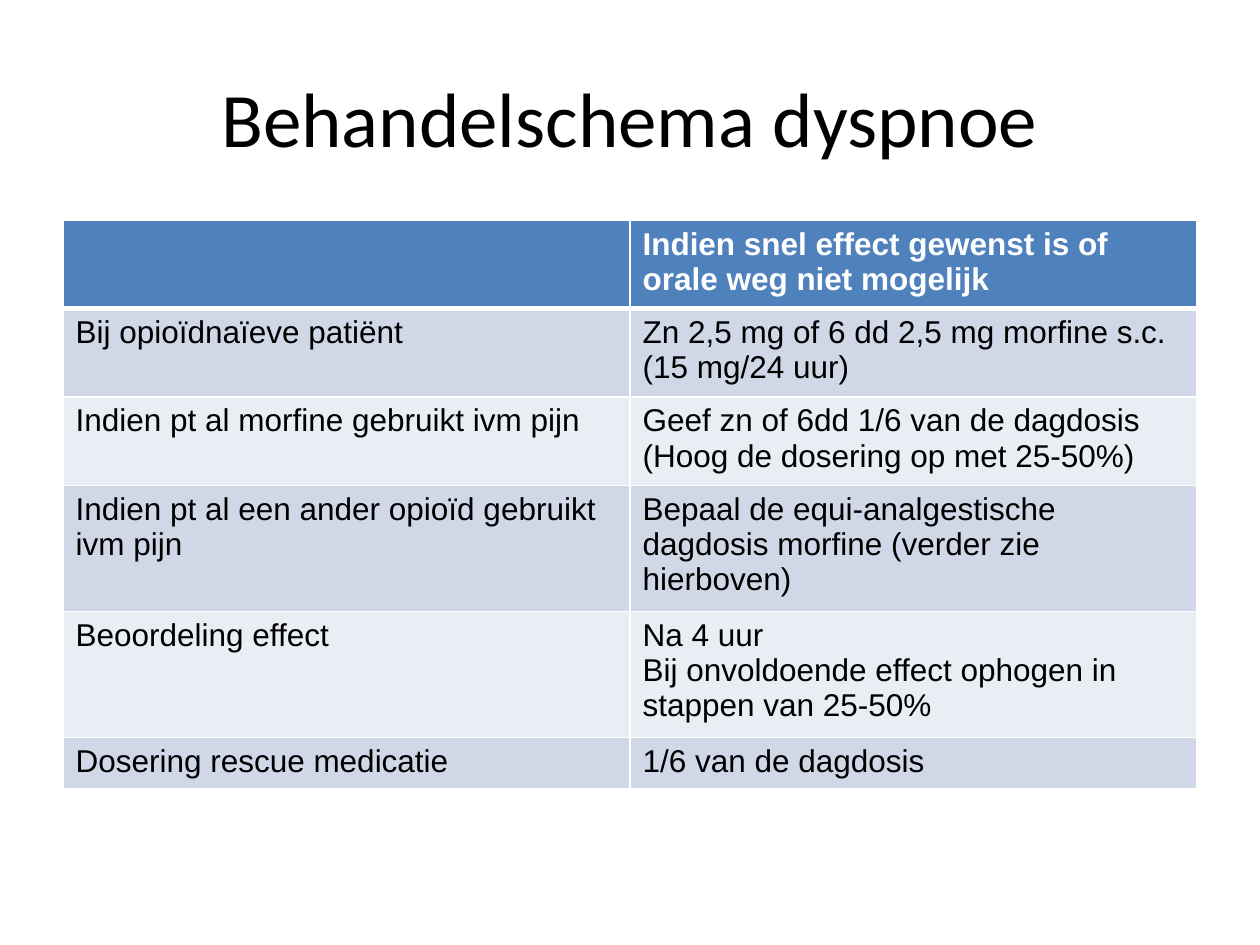
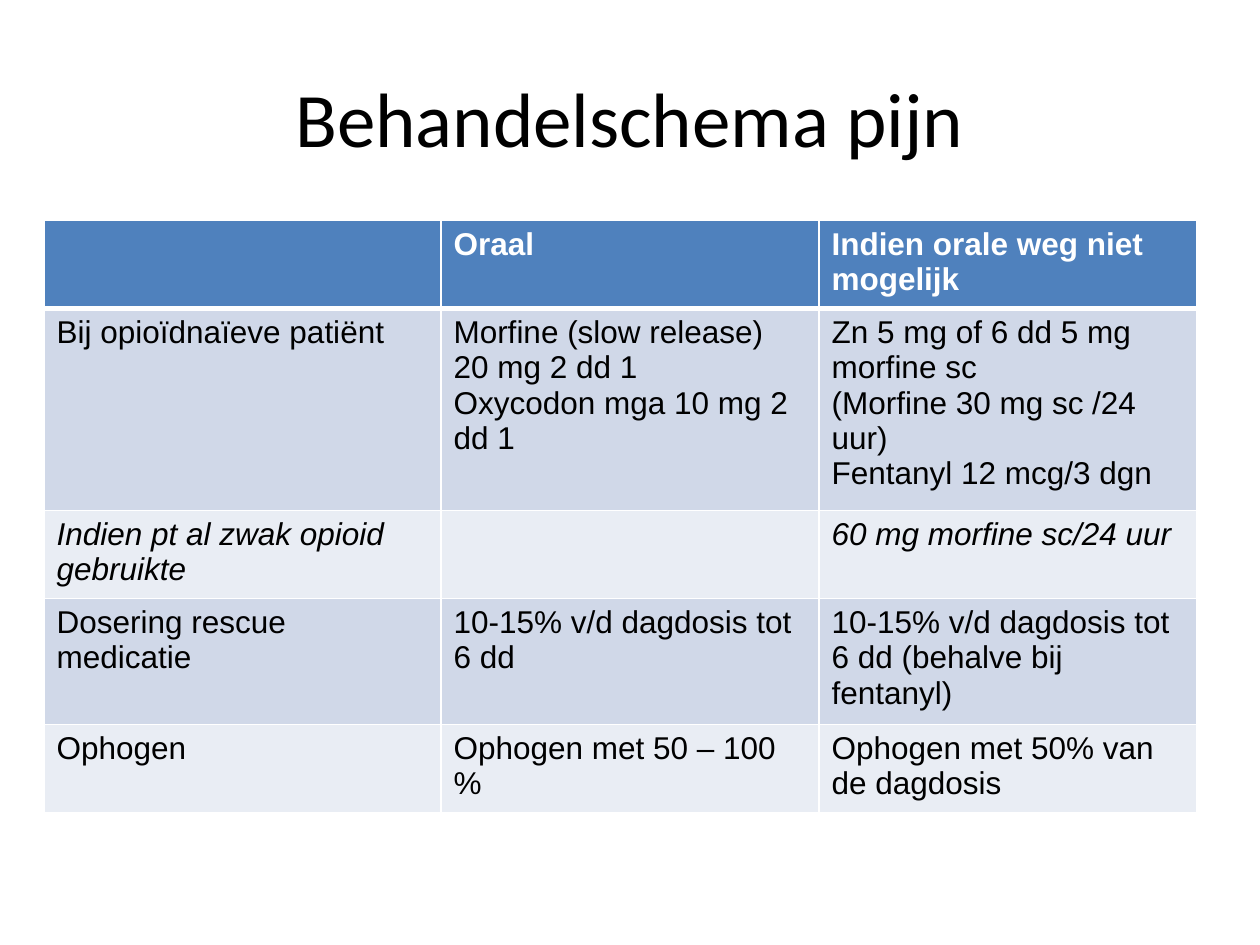
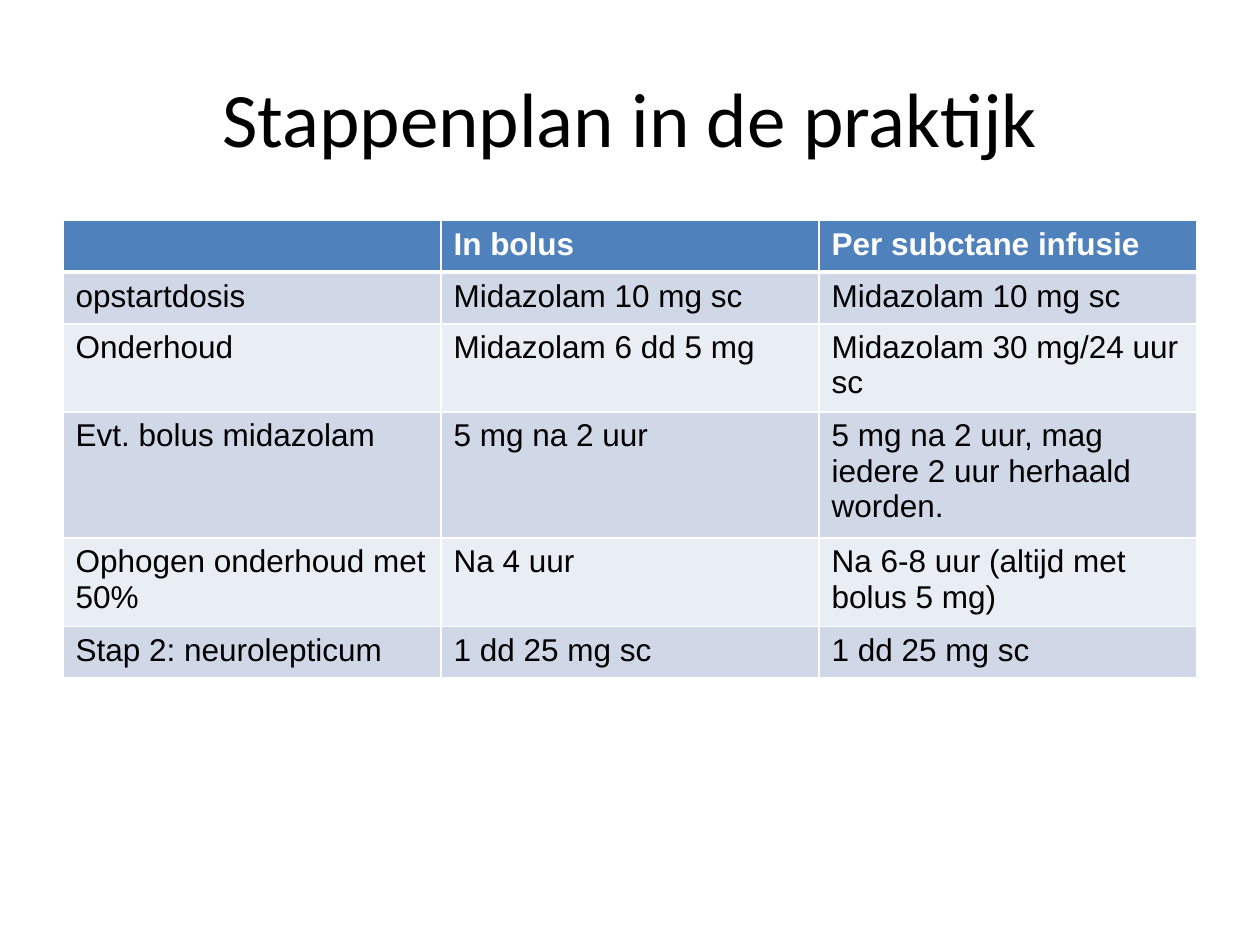
from lxml import etree
from pptx import Presentation
from pptx import util as u
from pptx.dml.color import RGBColor
from pptx.enum import text
from pptx.oxml import ns

BLACK = RGBColor(0x00, 0x00, 0x00)
WHITE = RGBColor(0xFF, 0xFF, 0xFF)
HEADER_BLUE = RGBColor(0x4F, 0x81, 0xBD)
BANDS = (RGBColor(0xD0, 0xD8, 0xE8), RGBColor(0xE9, 0xED, 0xF4))

# The 10 x 7.5 inch slide is a grid of 200 columns by 150 rows.
STEP = u.Inches(0.05)
COLUMNS, ROWS = 200, 150
MARGIN = 10
TITLE_TOP, TITLE_HEIGHT = 6, 25
TABLE_TOP = 35
ONE_LINE, TWO_LINES, THREE_LINES = 8.2, 14, 20


def grid(count):
    return u.Emu(round(count * STEP))


class Deck:
    title_font, title_size = "Calibri", 44
    table_font, table_size = "Arial", 18

    def __init__(self):
        self.presentation = Presentation()
        self.presentation.slide_width = grid(COLUMNS)
        self.presentation.slide_height = grid(ROWS)
        self.slide = None

    def start_slide(self, heading):
        self.slide = self.presentation.slides.add_slide(self.presentation.slide_layouts[6])
        self.title(heading)

    def format_runs(self, paragraph, font, size, color, bold=False, italic=False):
        for run in paragraph.runs:
            run.font.name = font
            run.font.size = u.Pt(size)
            run.font.color.rgb = color
            run.font.bold = bold
            run.font.italic = italic

    def title(self, heading):
        box = self.slide.shapes.add_textbox(
            grid(MARGIN), grid(TITLE_TOP), grid(COLUMNS - 2 * MARGIN), grid(TITLE_HEIGHT))
        frame = box.text_frame
        frame.word_wrap = True
        frame.vertical_anchor = text.MSO_ANCHOR.MIDDLE
        frame.text = heading
        frame.paragraphs[0].alignment = text.PP_ALIGN.CENTER
        self.format_runs(frame.paragraphs[0], self.title_font, self.title_size, BLACK)

    def table(self, left, widths, heights, entries, italic_rows=()):
        """Draw a banded table; a line break in an entry starts a new paragraph."""
        table = self.slide.shapes.add_table(
            len(heights), len(widths), grid(left), grid(TABLE_TOP),
            grid(sum(widths)), grid(sum(heights))).table
        for column, width in zip(table.columns, widths):
            column.width = grid(width)
        for row_index, (row, height) in enumerate(zip(table.rows, heights)):
            row.height = grid(height)
            for cell, entry in zip(row.cells, entries[row_index]):
                self.cell(cell, entry, row_index, row_index in italic_rows)

    def cell(self, cell, entry, row_index, italic):
        is_header = row_index == 0
        self.borders(cell, top=3 if row_index == 1 else 1, bottom=3 if is_header else 1)
        cell.fill.solid()
        cell.fill.fore_color.rgb = HEADER_BLUE if is_header else BANDS[(row_index - 1) % 2]
        cell.text_frame.text = entry
        for paragraph in cell.text_frame.paragraphs:
            self.format_runs(paragraph, self.table_font, self.table_size,
                             WHITE if is_header else BLACK, is_header, italic)

    def borders(self, cell, top, bottom):
        """Add white cell edges; call before the fill, which must follow them in the XML."""
        properties = cell._tc.get_or_add_tcPr()
        for edge, points in (("L", 1), ("R", 1), ("T", top), ("B", bottom)):
            line = etree.SubElement(properties, ns.qn(f"a:ln{edge}"), w=str(u.Pt(points)))
            fill = etree.SubElement(line, ns.qn("a:solidFill"))
            etree.SubElement(fill, ns.qn("a:srgbClr"), val=str(WHITE))


def main():
    deck = Deck()

    deck.start_slide("Behandelschema dyspnoe")
    deck.table(MARGIN, [90] * 2, [TWO_LINES] * 4 + [THREE_LINES, ONE_LINE], [
        ("", "Indien snel effect gewenst is of orale weg niet mogelijk"),
        ("Bij opioïdnaïeve patiënt", "Zn 2,5 mg of 6 dd 2,5 mg morfine s.c.\n(15 mg/24 uur)"),
        ("Indien pt al morfine gebruikt ivm pijn",
         "Geef zn of 6dd 1/6 van de dagdosis\n(Hoog de dosering op met 25-50%)"),
        ("Indien pt al een ander opioïd gebruikt ivm pijn",
         "Bepaal de equi-analgestische dagdosis morfine (verder zie hierboven)"),
        ("Beoordeling effect",
         "Na 4 uur\nBij onvoldoende effect ophogen in stappen van 25-50%"),
        ("Dosering rescue medicatie", "1/6 van de dagdosis"),
    ])

    deck.start_slide("Behandelschema pijn")
    deck.table(MARGIN - 3, [63, 60, 60], [TWO_LINES, 26] + [TWO_LINES] * 3, [
        ("", "Oraal", "Indien orale weg niet mogelijk"),
        ("Bij opioïdnaïeve patiënt",
         "Morfine (slow release) 20 mg 2 dd 1\nOxycodon mga 10 mg 2 dd 1",
         "Zn 5 mg of 6 dd 5 mg morfine sc\n(Morfine 30 mg sc /24 uur)\nFentanyl 12 mcg/3 dgn"),
        ("Indien pt al zwak opioid gebruikte", "", "60 mg morfine sc/24 uur"),
        ("Dosering rescue medicatie", "10-15% v/d dagdosis tot 6 dd",
         "10-15% v/d dagdosis tot 6 dd (behalve bij fentanyl)"),
        ("Ophogen", "Ophogen met 50 – 100 %", "Ophogen met 50% van de dagdosis"),
    ], italic_rows=(2,))

    deck.start_slide("Stappenplan in de praktijk")
    deck.table(MARGIN, [60] * 3, [ONE_LINE] * 3 + [TWO_LINES] * 2 + [ONE_LINE], [
        ("", "In bolus", "Per subctane infusie"),
        ("opstartdosis", "Midazolam 10 mg sc", "Midazolam 10 mg sc"),
        ("Onderhoud", "Midazolam 6 dd 5 mg", "Midazolam 30 mg/24 uur sc"),
        ("Evt. bolus midazolam", "5 mg na 2 uur",
         "5 mg na 2 uur, mag iedere 2 uur herhaald worden."),
        ("Ophogen onderhoud met 50%", "Na 4 uur", "Na 6-8 uur (altijd met bolus 5 mg)"),
        ("Stap 2: neurolepticum", "1 dd 25 mg sc", "1 dd 25 mg sc"),
    ])

    deck.presentation.save("out.pptx")


if __name__ == "__main__":
    main()
